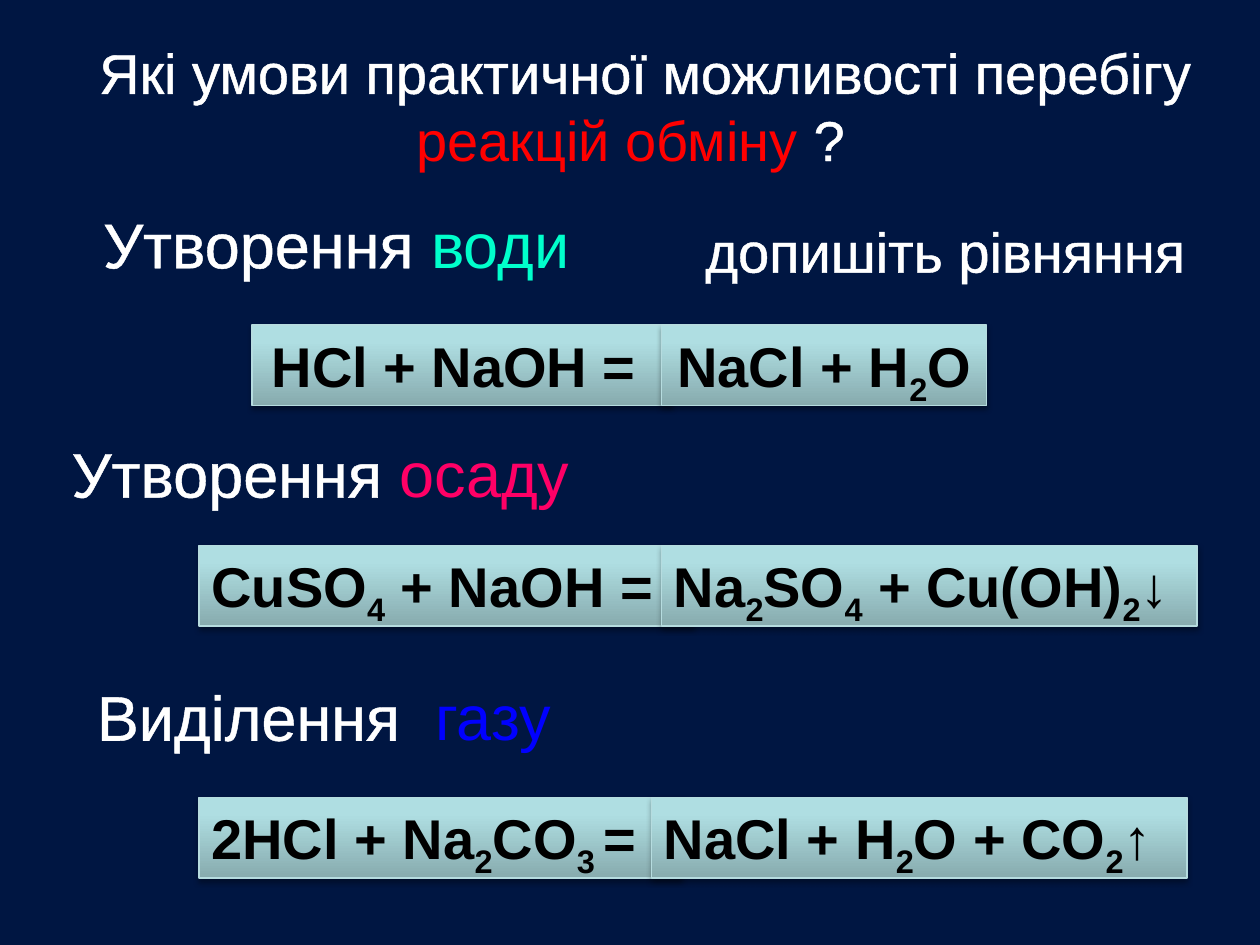
from dataclasses import dataclass

from pptx import Presentation
from pptx.dml.color import RGBColor
from pptx.enum.shapes import MSO_SHAPE
from pptx.enum.text import MSO_ANCHOR, MSO_AUTO_SIZE, PP_ALIGN
from pptx.oxml import parse_xml
from pptx.oxml.ns import nsdecls
from pptx.util import Inches, Pt


@dataclass(frozen=True)
class Theme:
    """Colours, font and type sizes of the slide."""
    font: str = "Arial"
    title_size: int = 32
    heading_size: int = 36
    equation_size: int = 32
    background: str = "001642"
    light: str = "FFFFFF"
    dark: str = "000000"
    reaction: str = "FF0000"
    water: str = "00FFCC"
    sediment: str = "FF0066"
    gas: str = "0000FF"
    box_line: str = "B6DCDF"
    box_stops: tuple = ((0, "87ABAE"), (80, "AFDEE2"), (100, "AFE0E4"))


THEME = Theme()
EQUATION_HEIGHT = 0.64


def prepare_frame(shape, size, align=PP_ALIGN.LEFT, indent=0):
    """Set up a wrapping text frame and return its first paragraph."""
    frame = shape.text_frame
    frame.word_wrap = True
    frame.auto_size = MSO_AUTO_SIZE.SHAPE_TO_FIT_TEXT
    frame.vertical_anchor = MSO_ANCHOR.TOP
    para = frame.paragraphs[0]
    para.alignment = align
    para.font.name = THEME.font
    para.font.size = Pt(size)
    if indent:
        para._p.get_or_add_pPr().set("indent", str(Inches(indent)))
    return para


def add_span(para, text, color, spacing=0):
    """Add a coloured span, outlined when it is light."""
    span = para.add_run()
    span.text = text
    span.font.color.rgb = RGBColor.from_string(color)
    properties = span.font._element
    if color == THEME.light:
        properties.insert(0, parse_xml(
            f'<a:ln {nsdecls("a")} w="{Pt(1.45)}"><a:solidFill>'
            f'<a:srgbClr val="{color}"/></a:solidFill></a:ln>'))
    if spacing:
        properties.set("spc", str(spacing * 100))


def place(shape, box):
    """Move a shape to a box given in inches."""
    shape.left, shape.top, shape.width, shape.height = map(Inches, box)


def add_title(page, box):
    """Fill the title placeholder with the question."""
    title = page.shapes.title
    place(title, box)
    para = prepare_frame(title, THEME.title_size, PP_ALIGN.CENTER, 0.24)
    add_span(para, "Які умови практичної можливості перебігу ", THEME.light)
    add_span(para, "реакцій обміну ", THEME.reaction)
    add_span(para, "?", THEME.light)


def add_heading(page, box, spans, size=THEME.heading_size, indent=0):
    """Add a heading made of coloured spans."""
    heading = page.shapes.add_textbox(*map(Inches, box))
    para = prepare_frame(heading, size, indent=indent)
    for span in spans:
        add_span(para, *span)


def style_equation_box(shape):
    """Give an equation box its line, gradient and soft shadow."""
    shape.line.color.rgb = RGBColor.from_string(THEME.box_line)
    shape.line.width = Pt(0.75)
    shape.fill.background()
    properties = shape._element.spPr
    stops = "".join(
        f'<a:gs pos="{position * 1000}"><a:srgbClr val="{color}"/></a:gs>'
        for position, color in THEME.box_stops)
    gradient = parse_xml(
        f'<a:gradFill {nsdecls("a")} rotWithShape="1"><a:gsLst>{stops}</a:gsLst>'
        '<a:lin ang="16200000" scaled="0"/></a:gradFill>')
    properties.replace(properties.find(
        "{http://schemas.openxmlformats.org/drawingml/2006/main}noFill"), gradient)
    properties.append(parse_xml(
        f'<a:effectLst {nsdecls("a")}><a:outerShdw blurRad="{Pt(3.1)}" '
        f'dist="{Pt(1.8)}" dir="5400000" rotWithShape="0">'
        f'<a:srgbClr val="{THEME.dark}"><a:alpha val="35000"/></a:srgbClr>'
        '</a:outerShdw></a:effectLst>'))


def add_equation_side(page, box, formula, align):
    """Add one side of an equation; underscores enclose subscripts."""
    shape = page.shapes.add_shape(MSO_SHAPE.RECTANGLE, *map(Inches, box))
    style_equation_box(shape)
    para = prepare_frame(shape, THEME.equation_size, align)
    para.font.bold = True
    para.font.color.rgb = RGBColor.from_string(THEME.dark)
    for number, text in enumerate(formula.split("_")):
        if text:
            span = para.add_run()
            span.text = text
            span.font.color.rgb = RGBColor.from_string(THEME.dark)
            if number % 2:
                span.font._element.set("baseline", "-25000")


def add_equation(page, top, sides, align=PP_ALIGN.LEFT):
    """Add both sides of an equation on one row."""
    for left, width, formula in sides:
        add_equation_side(page, (left, top, width, EQUATION_HEIGHT), formula, align)


def main():
    """Build the slide and save it."""
    deck = Presentation()
    deck.slide_width, deck.slide_height = Inches(10), Inches(7.5)
    page = deck.slides.add_slide(deck.slide_layouts[5])
    page.background.fill.solid()
    page.background.fill.fore_color.rgb = RGBColor.from_string(THEME.background)

    add_title(page, (0.42, 0.25, 9.17, 1.18))
    add_heading(page, (0.58, 1.58, 4.42, 0.71),
                [("Утворення ", THEME.light), ("води", THEME.water)], indent=0.14)
    add_heading(page, (5.25, 1.67, 4.42, 0.64),
                [("допишіть рівняння", THEME.light)], THEME.title_size, 0.25)
    add_equation(page, 2.58, [(2, 3.33, "НCl + NaOН = "),
                              (5.25, 2.58, "NaCl + Н_2_О")], PP_ALIGN.CENTER)
    add_heading(page, (0.33, 3.4, 4.67, 0.71),
                [("Утворення ", THEME.light), ("осаду", THEME.sediment)], indent=0.14)
    add_equation(page, 4.33, [(1.58, 3.92, "CuSO_4_ + NaOН ="),
                              (5.25, 4.25, "Na_2_SO_4_ + Cu(OН)_2_↓")])
    add_heading(page, (0.67, 5.33, 3.92, 0.71),
                [("Виділення", THEME.light), (" ", THEME.gas, 10), ("газу", THEME.gas)])
    add_equation(page, 6.33, [(1.58, 3.83, "2НCl + Na_2_СO_3 _="),
                              (5.17, 4.25, "NaCl + Н_2_O + CО_2_↑")])
    deck.save("out.pptx")


if __name__ == "__main__":
    main()
